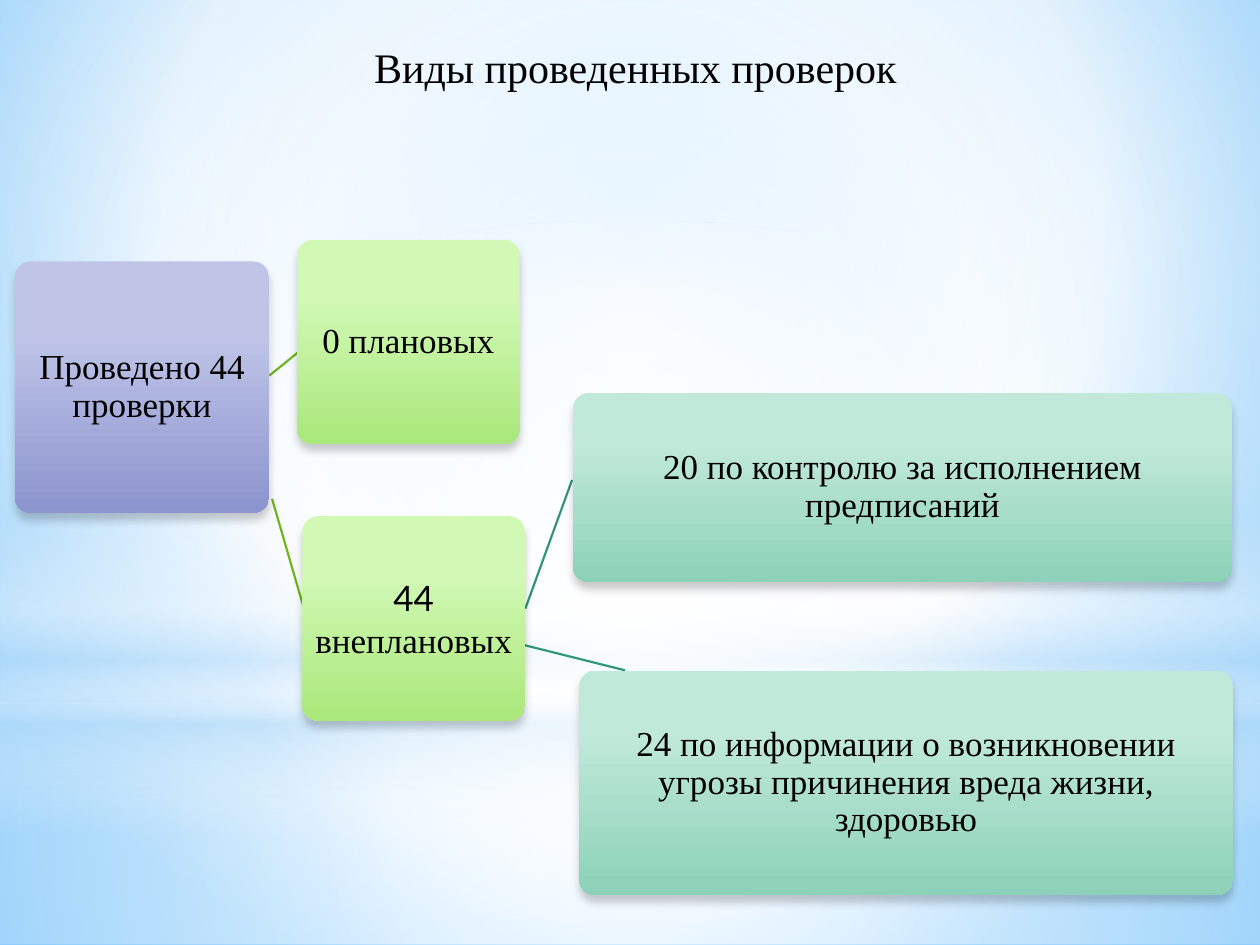
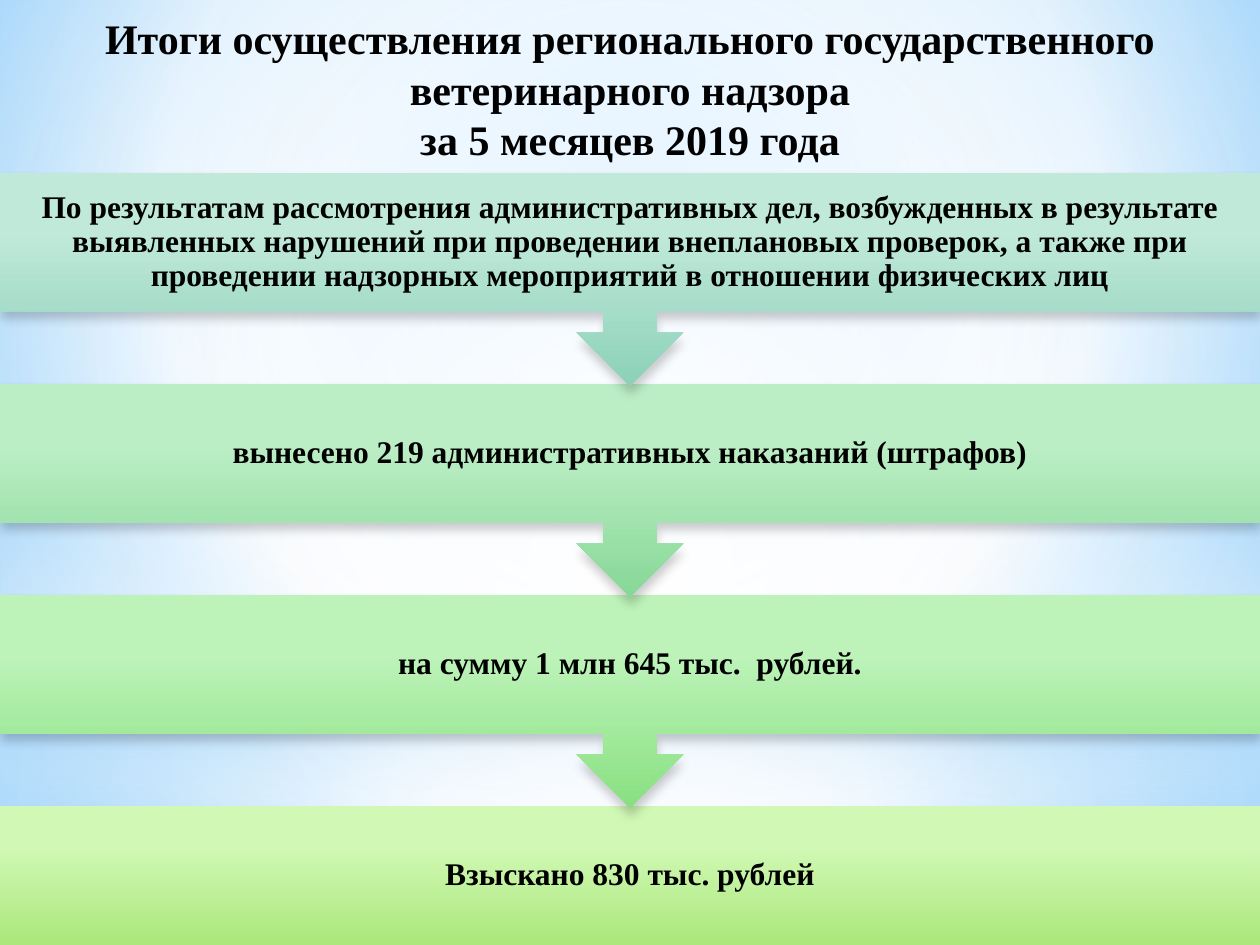
from lxml.etree import SubElement
from pptx import Presentation
from pptx.dml.color import RGBColor
from pptx.enum.shapes import MSO_CONNECTOR as Connector, MSO_SHAPE as Shape
from pptx.enum.text import MSO_ANCHOR as Anchor, MSO_AUTO_SIZE as AutoSize, PP_ALIGN as Align
from pptx.oxml.ns import qn
from pptx.util import Pt

hue = RGBColor.from_string
SERIF = "Times New Roman"
VIOLET = [(28, "C0C5E8", 100), (100, "8C94CE", 100)]
LIME = [(28, "D1F8B5", 100), (100, "AAE87B", 100)]
GREEN = [(28, "BDF3B9", 100), (100, "88E081", 100)]
MINT = [(28, "BCEEC6", 100), (100, "87D897", 100)]
TEAL = [(28, "C0E9DA", 100), (100, "8CD1B8", 100)]
LIME_LINE, TEAL_LINE = "72B41D", "31957A"


def paint(owner, stops, focus=None, shadow=False):
    is_shape = hasattr(owner, "shadow")
    fill = owner.fill if is_shape else owner.background.fill
    fill.gradient()
    gradient = owner._element.find(".//" + qn("a:gradFill"))
    for child in list(gradient):
        gradient.remove(child)
    stop_list = SubElement(gradient, qn("a:gsLst"))
    for position, colour, opacity in stops:
        stop = SubElement(stop_list, qn("a:gs"), pos=str(position * 1000))
        tint = SubElement(stop, qn("a:srgbClr"), val=colour)
        if opacity < 100:
            SubElement(tint, qn("a:alpha"), val=str(opacity * 1000))
    if focus:
        circle = SubElement(gradient, qn("a:path"), {"path": "circle"})
        sides = {side: str(share * 1000) for side, share in zip("ltrb", focus)}
        SubElement(circle, qn("a:fillToRect"), sides)
    else:
        SubElement(gradient, qn("a:lin"), ang="5400000", scaled="0")
    if is_shape:
        owner.line.fill.background()
        owner.shadow.inherit = False
    if shadow:
        effects = owner._element.spPr.find(qn("a:effectLst"))
        outer = SubElement(effects, qn("a:outerShdw"), blurRad=str(Pt(5)), dist=str(Pt(4)),
                           dir="5400000", rotWithShape="0")
        tint = SubElement(outer, qn("a:srgbClr"), val="000000")
        SubElement(tint, qn("a:alpha"), val="20000")


def write(box, paragraphs, size=20, bold=False, align=Align.CENTER, anchor=Anchor.MIDDLE,
          spacing=0.9, inset=2):
    frame = box.text_frame
    frame.word_wrap = True
    frame.auto_size = AutoSize.NONE
    frame.vertical_anchor = anchor
    frame.margin_left = frame.margin_right = Pt(inset)
    frame.margin_top = frame.margin_bottom = Pt(inset / 2)
    for number, spans in enumerate(paragraphs):
        para = frame.add_paragraph() if number else frame.paragraphs[0]
        para.alignment = align
        para.line_spacing = spacing
        para.space_before = para.space_after = Pt(0)
        for text, font in spans:
            span = para.add_run()
            span.text = text
            span.font.name = font
            span.font.size = Pt(size)
            span.font.bold = bold
            span.font.color.rgb = hue("000000")


deck = Presentation()
deck.slide_width, deck.slide_height = Pt(720), Pt(540)
master = deck.slide_master
layout = deck.slide_layouts[5]
checks_page = deck.slides.add_slide(layout)
results_page = deck.slides.add_slide(layout)

paint(master, [(0, "9ED5FF", 100), (60, "FFFFFF", 100), (100, "5BB9FF", 100)],
      focus=(20, 10, 20, 60))
CENTRE = (50, 50, 50, 50)
glows = [
    (Shape.RECTANGLE, 402, 138, CENTRE,
     [(0, "FFFFFF", 91), (37, "FFFFFF", 76), (100, "B4DCFA", 79)]),
    (Shape.RECTANGLE, 0, 402, CENTRE,
     [(0, "FFFFFF", 89), (48, "FFFFFF", 62), (100, "B4DCFA", 79)]),
    (Shape.RECTANGLE, 296.5, 180, None,
     [(0, "FFFFFF", 0), (29, "FFFFFF", 30), (45, "B4DCFA", 40),
      (55, "FFFFFF", 26), (65, "B4DCFA", 60), (100, "FFFFFF", 0)]),
    (Shape.OVAL, 126, 402, CENTRE, [(0, "FFFFFF", 100), (56, "FFFFFF", 0)]),
]
for order, (kind, top, height, focus, stops) in enumerate(glows):
    glow = checks_page.shapes.add_shape(kind, Pt(0), Pt(top), Pt(720), Pt(height))
    paint(glow, stops, focus=focus)
    glow._element.nvSpPr.cNvPr.set("id", str(100 + order))
    master.shapes._spTree.insert(2 + order, glow._element)

titles = [
    (checks_page, (206.6, 20, 363, 36), False, Align.LEFT, ["Виды проведенных проверок"]),
    (results_page, (0, 3.6, 720, 94.5), True, Align.CENTER,
     ["Итоги осуществления регионального государственного ветеринарного надзора",
      "за 5 месяцев 2019 года"]),
]
for page, place, bold, align, lines in titles:
    title = page.shapes.title
    title.left, title.top, title.width, title.height = map(Pt, place)
    write(title, [[(line, SERIF)] for line in lines], size=24, bold=bold, align=align,
          anchor=Anchor.TOP, spacing=1, inset=7.2)

branches = [
    (154, 214.6, 170, 201.6, LIME_LINE),
    (155.5, 285.1, 173.5, 347, LIME_LINE),
    (300.2, 347.8, 326.9, 274.3, TEAL_LINE),
    (299.5, 368.6, 357.1, 383, TEAL_LINE),
]
for start_x, start_y, end_x, end_y, colour in branches:
    branch = checks_page.shapes.add_connector(
        Connector.STRAIGHT, Pt(start_x), Pt(start_y), Pt(end_x), Pt(end_y))
    branch.line.color.rgb = hue(colour)
    branch.line.width = Pt(1.25)
    SubElement(branch._element.spPr, qn("a:effectLst"))

cards = [
    ((8.6, 149.4, 145.2, 143.6), VIOLET, 0.9, [("Проведено 44 проверки", SERIF)]),
    ((169.8, 137, 127.2, 116.8), LIME, 0.9, [("0 плановых", SERIF)]),
    ((172.8, 295, 127.2, 116.8), LIME, 1, [("44", "Lato"), (" внеплановых", SERIF)]),
    ((327.4, 224.6, 376.6, 108), TEAL, 0.9,
     [("20 по контролю за исполнением предписаний", SERIF)]),
    ((331, 383.2, 373.6, 128.2), TEAL, 0.9,
     [("24 по информации о возникновении угрозы причинения вреда жизни, здоровью", SERIF)]),
]
for place, stops, spacing, spans in cards:
    card = checks_page.shapes.add_shape(Shape.ROUNDED_RECTANGLE, *map(Pt, place))
    card.adjustments[0] = 9 / min(place[2:])
    paint(card, stops, shadow=True)
    write(card, [spans], spacing=spacing)

steps = [
    (TEAL, "По результатам рассмотрения административных дел, возбужденных в результате "
           "выявленных нарушений при проведении внеплановых проверок, а также при "
           "проведении надзорных мероприятий в отношении физических лиц"),
    (MINT, "вынесено 219 административных наказаний (штрафов)"),
    (GREEN, "на сумму 1 млн 645 тыс.  рублей."),
    (LIME, "Взыскано 830 тыс. рублей"),
]
last = len(steps) - 1
for number, (stops, text) in reversed(list(enumerate(steps))):
    kind, height = (Shape.RECTANGLE, 79.2) if number == last else (Shape.DOWN_ARROW_CALLOUT, 121.7)
    step = results_page.shapes.add_shape(
        kind, Pt(0), Pt(98.8 + 120.6 * number), Pt(720), Pt(height))
    paint(step, stops, shadow=True)
    write(step, [[(text, SERIF)]], size=18, bold=True, inset=10)

deck.save("out.pptx")
